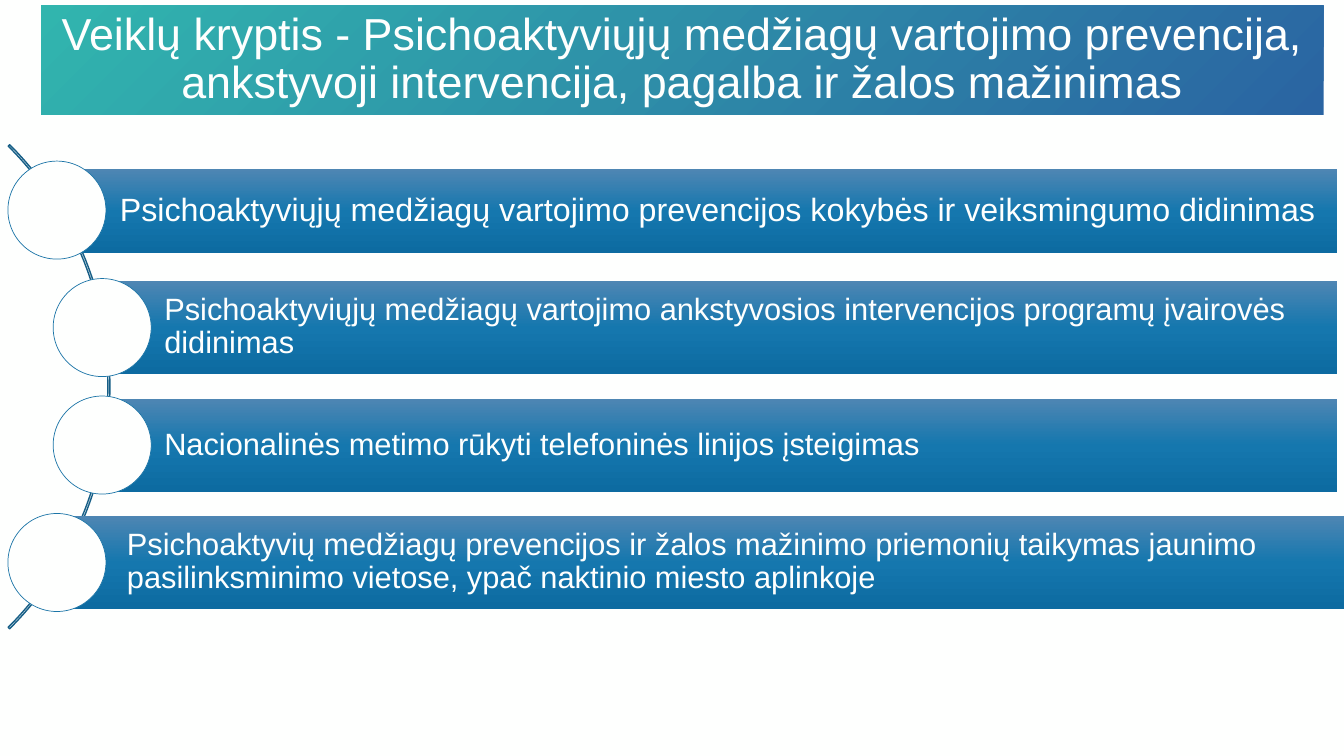
from lxml.etree import SubElement
from pptx import Presentation
from pptx.dml.color import RGBColor
from pptx.enum.shapes import MSO_SHAPE
from pptx.enum.text import MSO_ANCHOR, PP_ALIGN
from pptx.oxml.ns import qn
from pptx.util import Cm, Pt

COLOURS = {
    "white": "FEFFFE",
    "arc": "165E86",
    "circle_line": "1C75A7",
    "bar_top": "4E86B3",
    "bar_middle": "1577AE",
    "bar_bottom": "0D6BA1",
    "title_start": "31B5AE",
    "title_end": "2A64A2",
}

TITLE = ("Veiklų kryptis - Psichoaktyviųjų medžiagų vartojimo prevencija, "
         "ankstyvoji intervencija, pagalba ir žalos mažinimas")

# Text, size, circle left, then bar left, top, right and height in cm
ACTIVITIES = [
    ("Psichoaktyviųjų medžiagų vartojimo prevencijos kokybės ir veiksmingumo didinimas",
     23, 0.2, (1.45, 4.27, 33.68, 2.11)),
    ("Psichoaktyviųjų medžiagų vartojimo ankstyvosios intervencijos programų "
     "įvairovės didinimas",
     22, 1.34, (2.57, 7.08, 33.68, 2.34)),
    ("Nacionalinės metimo rūkyti telefoninės linijos įsteigimas",
     22, 1.34, (2.57, 10.05, 33.68, 2.34)),
    ("Psichoaktyvių medžiagų prevencijos ir žalos mažinimo priemonių taikymas jaunimo "
     "pasilinksminimo vietose, ypač naktinio miesto aplinkoje",
     22, 0.2, (1.63, 13, 33.86, 2.34)),
]
CIRCLE_TOP, CIRCLE_PITCH, CIRCLE_SIZE = 4.06, 2.96, 2.47
BAR_MARGINS = {"margin_left": Cm(1.57), "margin_right": Cm(0.16),
               "margin_top": Cm(0.16), "margin_bottom": Cm(0.16)}


def colour(name):
    return RGBColor.from_string(COLOURS[name])


def set_formats(target, formats):
    for name, value in formats.items():
        setattr(target, name, value)


def add_plain_shape(slide, kind, left, top, width, height, fill=None, line=None, weight=1):
    shape = slide.shapes.add_shape(kind, Cm(left), Cm(top), Cm(width), Cm(height))
    shape.shadow.inherit = False
    if fill:
        shape.fill.solid()
        shape.fill.fore_color.rgb = colour(fill)
    else:
        shape.fill.background()
    if line:
        shape.line.color.rgb = colour(line)
        shape.line.width = Pt(weight)
    else:
        shape.line.fill.background()
    return shape


def set_gradient(shape, names, radial=False):
    """Spread the named colours evenly, downwards or out from the top left corner."""
    shape.fill.gradient()
    gradient = shape._element.spPr.find(qn("a:gradFill"))
    for child in list(gradient):
        gradient.remove(child)
    stops = SubElement(gradient, qn("a:gsLst"))
    for index, name in enumerate(names):
        position = 100000 * index // (len(names) - 1)
        stop = SubElement(stops, qn("a:gs"), pos=str(position))
        SubElement(stop, qn("a:srgbClr"), val=COLOURS[name])
    if radial:
        shade = SubElement(gradient, qn("a:path"), {"path": "circle"})
        SubElement(shade, qn("a:fillToRect"), r="100000", b="100000")
    else:
        SubElement(gradient, qn("a:lin"), ang="5400000", scaled="0")


def write_text(shape, text, size, alignment, margins):
    frame = shape.text_frame
    set_formats(frame, {"word_wrap": True, "vertical_anchor": MSO_ANCHOR.MIDDLE, **margins})
    paragraph = frame.paragraphs[0]
    set_formats(paragraph, {"alignment": alignment, "line_spacing": 0.9})
    run = paragraph.add_run()
    run.text = text
    set_formats(run.font, {"name": "Arial", "size": Pt(size)})
    run.font.color.rgb = colour("white")


def add_arc(slide):
    arc = add_plain_shape(slide, MSO_SHAPE.BLOCK_ARC, -14.48, 1.12, 17.25, 17.25, line="arc")
    for index, value in enumerate((189, 27, 0.3 / 100)):
        arc.adjustments[index] = value


def add_activity(slide, index, text, size, circle_left, bar_box):
    left, top, right, height = bar_box
    bar = add_plain_shape(slide, MSO_SHAPE.RECTANGLE, left, top, right - left, height)
    set_gradient(bar, ["bar_top", "bar_middle", "bar_bottom"])
    write_text(bar, text, size, PP_ALIGN.LEFT, BAR_MARGINS)
    add_plain_shape(slide, MSO_SHAPE.OVAL, circle_left, CIRCLE_TOP + index * CIRCLE_PITCH,
                    CIRCLE_SIZE, CIRCLE_SIZE, "white", "circle_line", 0.5)


def add_title(slide):
    title = add_plain_shape(slide, MSO_SHAPE.RECTANGLE, 1.04, 0.14, 32.31, 2.75)
    set_gradient(title, ["title_start", "title_end"], radial=True)
    write_text(title, TITLE, 32, PP_ALIGN.CENTER, {})


def main():
    presentation = Presentation()
    set_formats(presentation, {"slide_width": Cm(33.86), "slide_height": Cm(19.05)})
    slide = presentation.slides.add_slide(presentation.slide_layouts[6])
    slide.background.fill.solid()
    slide.background.fill.fore_color.rgb = colour("white")

    # Curved list of activities
    add_arc(slide)
    for index, activity in enumerate(ACTIVITIES):
        add_activity(slide, index, *activity)

    # Title band
    add_title(slide)
    presentation.save("out.pptx")


if __name__ == "__main__":
    main()
